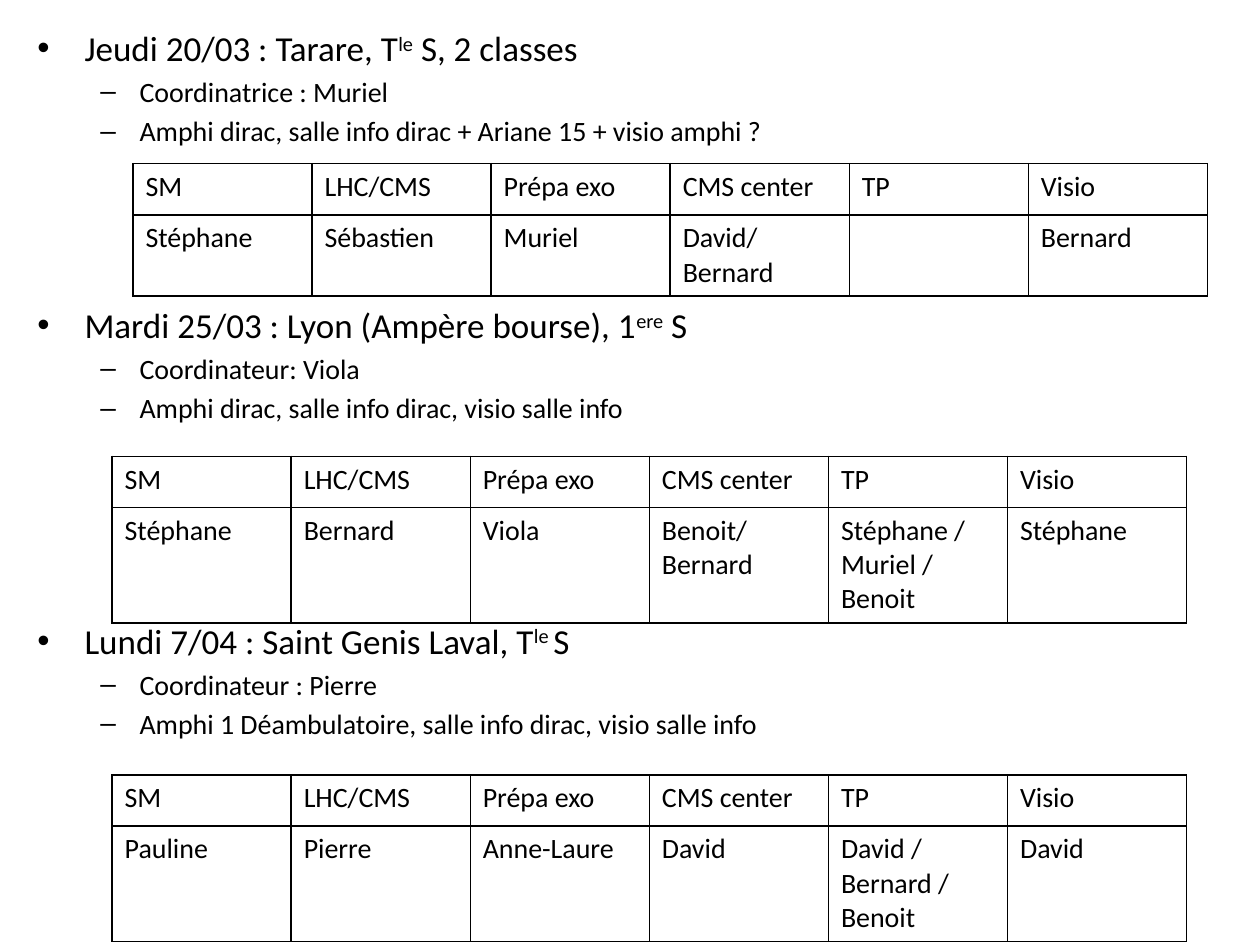
from dataclasses import dataclass

from lxml import etree
from pptx import Presentation
from pptx.dml.color import RGBColor
from pptx.enum.text import MSO_AUTO_SIZE, MSO_VERTICAL_ANCHOR
from pptx.oxml.ns import qn
from pptx.util import Cm, Pt

NO_AUTOFIT = MSO_AUTO_SIZE.NONE
ANCHOR_TOP = MSO_VERTICAL_ANCHOR.TOP
FONT = "Calibri"
BLACK = "000000"
HEADING_SIZE = 20
DETAIL_SIZE = 16
DETAIL_GAP = 3.3
SUPERSCRIPT = "30000"
COLUMN_WIDTH = Cm(3.61)
HEADER_HEIGHT = Cm(1.03)
BORDER_WIDTH = Pt(1)
BORDER_TAGS = ("a:lnL", "a:lnR", "a:lnT", "a:lnB")
ACTIVITIES = ("SM", "LHC/CMS", "Prépa exo", "CMS center", "TP", "Visio")


@dataclass
class Session:
    heading: tuple[str, str, str]
    details: tuple[str, str]
    people: tuple[str, ...]
    space_before: float
    table_left: float
    table_top: float
    people_height: float


SESSIONS = (
    Session(
        ("Jeudi 20/03 : Tarare, T", "le", " S, 2 classes"),
        ("Coordinatrice : Muriel",
         "Amphi dirac, salle info dirac + Ariane 15 + visio amphi ?"),
        ("Stéphane", "Sébastien", "Muriel", "David/Bernard", "", "Bernard"),
        0, 2.68, 3.3, 1.63,
    ),
    Session(
        ("Mardi 25/03 : Lyon (Ampère bourse), 1", "ere", " S"),
        ("Coordinateur: Viola",
         "Amphi dirac, salle info dirac, visio salle info"),
        ("Stéphane", "Bernard", "Viola", "Benoit/Bernard",
         "Stéphane / Muriel / Benoit", "Stéphane"),
        89.4, 2.26, 9.2, 2.32,
    ),
    Session(
        ("Lundi 7/04 : Saint Genis Laval, T", "le ", "S"),
        ("Coordinateur : Pierre",
         "Amphi 1 Déambulatoire, salle info dirac, visio salle info"),
        ("Pauline", "Pierre", "Anne-Laure", "David",
         "David / Bernard / Benoit", "David"),
        111.4, 2.26, 15.62, 2.32,
    ),
)


def color(value: str) -> RGBColor:
    return RGBColor.from_string(value)


def add_text(paragraph, text: str, *, size: float = DETAIL_SIZE,
             superscript: bool = False) -> None:
    run = paragraph.add_run()
    run.text = text
    run.font.name = FONT
    run.font.size = Pt(size)
    run.font.color.rgb = color(BLACK)
    if superscript:
        run.font._element.set("baseline", SUPERSCRIPT)


def format_list_item(paragraph, level: int, margin: float, hanging: float,
                     space_before: float) -> None:
    paragraph.level = level
    paragraph.space_before = Pt(space_before)
    properties = paragraph._p.get_or_add_pPr()
    properties.set("marL", str(Cm(margin)))
    properties.set("indent", str(-Cm(hanging)))


def fill_agenda(placeholder) -> None:
    placeholder.left, placeholder.top = Cm(0.5), Cm(0.41)
    placeholder.width, placeholder.height = Cm(16.97), Cm(18.31)
    text_frame = placeholder.text_frame
    text_frame.word_wrap = True
    text_frame.auto_size = NO_AUTOFIT
    text_frame.vertical_anchor = ANCHOR_TOP
    for index, session in enumerate(SESSIONS):
        paragraph = text_frame.add_paragraph() if index else text_frame.paragraphs[0]
        format_list_item(paragraph, 0, 0.95, 0.95, session.space_before)
        for position, text in enumerate(session.heading):
            add_text(paragraph, text, size=HEADING_SIZE, superscript=position == 1)
        for detail in session.details:
            paragraph = text_frame.add_paragraph()
            format_list_item(paragraph, 1, 2.06, 0.79, DETAIL_GAP)
            add_text(paragraph, detail)


def format_cell(cell) -> None:
    properties = cell._tc.get_or_add_tcPr()
    for tag in BORDER_TAGS:
        line = etree.SubElement(properties, qn(tag), w=str(BORDER_WIDTH))
        fill = etree.SubElement(line, qn("a:solidFill"))
        etree.SubElement(fill, qn("a:srgbClr"), val=BLACK)
    cell.fill.background()


def add_schedule(slide, session: Session) -> None:
    people_height = Cm(session.people_height)
    table = slide.shapes.add_table(
        2, len(ACTIVITIES), Cm(session.table_left), Cm(session.table_top),
        COLUMN_WIDTH * len(ACTIVITIES), HEADER_HEIGHT + people_height,
    ).table
    table.first_row = False
    table.horz_banding = False
    for column in table.columns:
        column.width = COLUMN_WIDTH
    table.rows[0].height = HEADER_HEIGHT
    table.rows[1].height = people_height
    for row, texts in zip(table.rows, (ACTIVITIES, session.people)):
        for cell, text in zip(row.cells, texts):
            format_cell(cell)
            if text:
                add_text(cell.text_frame.paragraphs[0], text)


def main() -> None:
    presentation = Presentation()
    presentation.slide_width = Cm(25.4)
    presentation.slide_height = Cm(19.05)
    slide = presentation.slides.add_slide(presentation.slide_layouts[1])
    title = slide.shapes.title._element
    title.getparent().remove(title)
    fill_agenda(slide.placeholders[1])
    for session in SESSIONS:
        add_schedule(slide, session)
    presentation.save("out.pptx")


if __name__ == "__main__":
    main()
